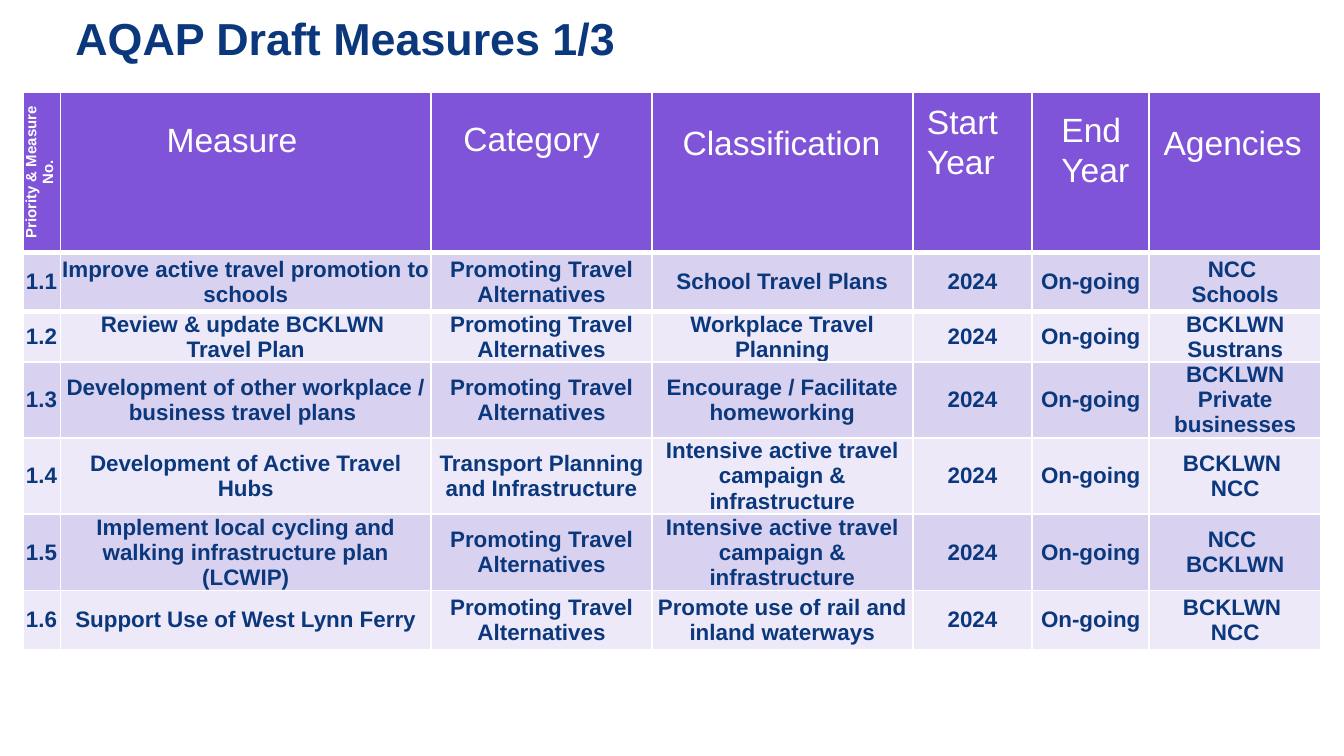
from lxml import etree
from pptx import Presentation
from pptx.dml.color import RGBColor
from pptx.enum.text import MSO_ANCHOR, MSO_AUTO_SIZE, PP_ALIGN
from pptx.oxml.ns import qn
from pptx.util import Cm, Pt

LEFT, CENTER = PP_ALIGN.LEFT, PP_ALIGN.CENTER
MIDDLE = MSO_ANCHOR.MIDDLE
FIT_SHAPE = MSO_AUTO_SIZE.SHAPE_TO_FIT_TEXT
TITLE_ONLY = 5

THEME = {
    "font": "Arial",
    "navy": RGBColor(0x0B, 0x38, 0x7C),
    "white": RGBColor(0xFF, 0xFF, 0xFF),
    "header": RGBColor(0x80, 0x54, 0xD8),
    "bands": (RGBColor(0xD8, 0xD1, 0xF0), RGBColor(0xED, 0xE9, 0xF8)),
    "title_size": Pt(24),
    "heading_size": Pt(18),
    "body_size": Pt(12),
    "small_size": Pt(8),
    "header_rule": Pt(3),
}

TITLE = "AQAP Draft Measures 1/3"
NUMBER_HEADING = "Priority & Measure\nNo."
HEADINGS = [
    ("Measure", 2.9, 2.13, 3.33, 1.02),
    ("Category", 8.51, 2.11, 3.33, 1.02),
    ("Classification", 12.65, 2.18, 4.34, 1.02),
    ("Start\nYear", 17.27, 1.78, 1.91, 1.8),
    ("End\nYear", 19.81, 1.93, 1.91, 1.8),
    ("Agencies", 21.74, 2.18, 3.33, 1.02),
]

PROMOTING = "Promoting Travel Alternatives"
PLANNING = "Transport Planning and Infrastructure"
CAMPAIGN = "Intensive active travel campaign & infrastructure"
START, END = "2024", "On-going"
MEASURES = [
    ("Improve active travel promotion to schools", PROMOTING,
     "School Travel Plans", "NCC \nSchools"),
    ("Review & update BCKLWN \nTravel Plan", PROMOTING,
     "Workplace Travel Planning", "BCKLWN Sustrans"),
    ("Development of other workplace / business travel plans ", PROMOTING,
     "Encourage / Facilitate homeworking", "BCKLWN Private businesses"),
    ("Development of Active Travel Hubs", PLANNING, CAMPAIGN, "BCKLWN \nNCC"),
    ("Implement local cycling and walking infrastructure plan (LCWIP)",
     PROMOTING, CAMPAIGN, "NCC \nBCKLWN"),
    ("Support Use of West Lynn Ferry", PROMOTING,
     "Promote use of rail and inland waterways", "BCKLWN \nNCC"),
]

TABLE_LEFT, TABLE_TOP = 0.43, 1.75
COLUMN_WIDTHS = [0.71, 7.01, 4.17, 4.93, 2.26, 2.21, 3.25]
ROW_HEIGHTS = [3.02, 1.12, 0.95, 1.44, 1.44, 1.44, 1.12]


def write(text_frame, text, size, color, bold=False, align=LEFT):
    for index, line in enumerate(text.split("\n")):
        paragraph = text_frame.add_paragraph() if index else text_frame.paragraphs[0]
        paragraph.alignment = align
        run = paragraph.add_run()
        run.text = line
        run.font.name = THEME["font"]
        run.font.size = THEME[size]
        run.font.color.rgb = THEME[color]
        run.font.bold = bold


def fill_cell(cell, color):
    cell.fill.solid()
    cell.fill.fore_color.rgb = color


def add_rule(cell, edge):
    line = etree.Element(qn(f"a:{edge}"), w=str(THEME["header_rule"]))
    fill = etree.SubElement(line, qn("a:solidFill"))
    etree.SubElement(fill, qn("a:srgbClr"), val=str(THEME["white"]))
    cell._tc.get_or_add_tcPr().insert(0, line)


def write_cell(cell, text, size, color):
    cell.vertical_anchor = MIDDLE
    cell.margin_left = cell.margin_right = cell.margin_top = cell.margin_bottom = 0
    write(cell.text_frame, text, size, color, bold=True, align=CENTER)


def add_title(slide):
    title = slide.shapes.title
    title.left, title.top, title.width, title.height = Cm(1.17), Cm(0), Cm(22.86), Cm(1.42)
    title.text_frame.vertical_anchor = MIDDLE
    write(title.text_frame, TITLE, "title_size", "navy", bold=True)


def add_measures_table(slide):
    table = slide.shapes.add_table(
        len(ROW_HEIGHTS), len(COLUMN_WIDTHS), Cm(TABLE_LEFT), Cm(TABLE_TOP),
        Cm(sum(COLUMN_WIDTHS)), Cm(sum(ROW_HEIGHTS))).table
    for column, width in zip(table.columns, COLUMN_WIDTHS):
        column.width = Cm(width)
    for row, height in zip(table.rows, ROW_HEIGHTS):
        row.height = Cm(height)

    for cell in table.rows[0].cells:
        fill_cell(cell, THEME["header"])
        add_rule(cell, "lnB")
    for cell in table.rows[1].cells:
        add_rule(cell, "lnT")
    number_cell = table.cell(0, 0)
    write_cell(number_cell, NUMBER_HEADING, "small_size", "white")
    number_cell._tc.get_or_add_tcPr().set("vert", "vert270")

    for number, (measure, category, classification, agencies) in enumerate(MEASURES, 1):
        values = (f"1.{number}", measure, category, classification, START, END, agencies)
        for cell, value in zip(table.rows[number].cells, values):
            fill_cell(cell, THEME["bands"][(number - 1) % 2])
            write_cell(cell, value, "body_size", "navy")


def add_headings(slide):
    for text, *box in HEADINGS:
        text_frame = slide.shapes.add_textbox(*map(Cm, box)).text_frame
        text_frame.word_wrap = True
        text_frame.auto_size = FIT_SHAPE
        write(text_frame, text, "heading_size", "white")


def main():
    presentation = Presentation()
    presentation.slide_width, presentation.slide_height = Cm(25.4), Cm(14.29)
    slide = presentation.slides.add_slide(presentation.slide_layouts[TITLE_ONLY])
    add_title(slide)
    add_measures_table(slide)
    add_headings(slide)
    presentation.save("out.pptx")


if __name__ == "__main__":
    main()
